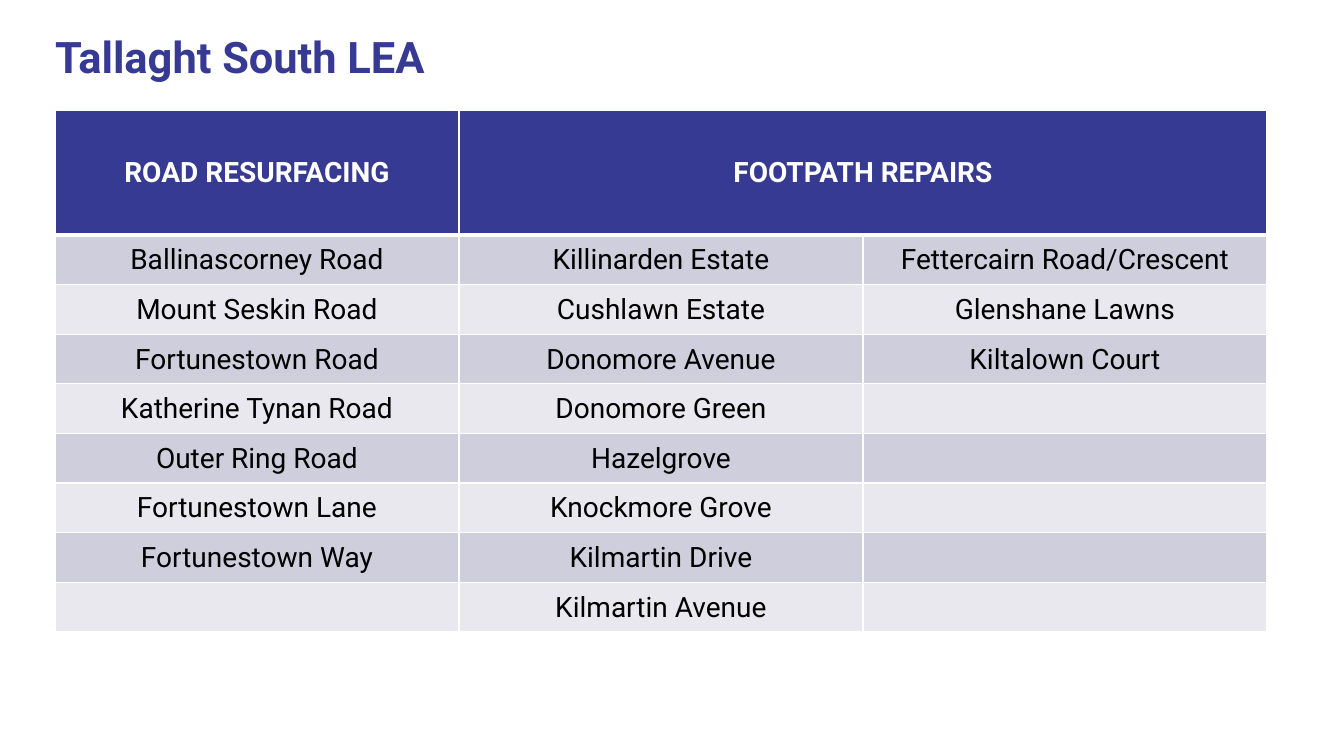
from lxml.etree import SubElement
from pptx import Presentation
from pptx.dml.color import RGBColor
from pptx.enum.text import MSO_ANCHOR, PP_ALIGN
from pptx.oxml.ns import qn
from pptx.util import Emu, Pt

PX_PER_INCH = 100.8
FONT = "Roboto"
INDIGO = RGBColor(0x36, 0x3A, 0x92)
WHITE = RGBColor(0xFF, 0xFF, 0xFF)
BLACK = RGBColor(0x00, 0x00, 0x00)
BANDS = (RGBColor(0xCE, 0xCE, 0xDC), RGBColor(0xE8, 0xE8, 0xEE))
HEADER_HEIGHT = 125
WORKS = [
    ("ROAD RESURFACING", "FOOTPATH REPAIRS", ""),
    ("Ballinascorney Road", "Killinarden Estate", "Fettercairn Road/Crescent"),
    ("Mount Seskin Road", "Cushlawn Estate", "Glenshane Lawns"),
    ("Fortunestown Road", "Donomore Avenue", "Kiltalown Court"),
    ("Katherine Tynan Road", "Donomore Green", ""),
    ("Outer Ring Road", "Hazelgrove", ""),
    ("Fortunestown Lane", "Knockmore Grove", ""),
    ("Fortunestown Way", "Kilmartin Drive", ""),
    ("", "Kilmartin Avenue", ""),
]


def px(length):
    """Turn pixels into EMU."""
    return Emu(round(length * 914400 / PX_PER_INCH))


def style_font(font, size, color, bold):
    """Set the typeface, size, colour and weight of a font."""
    font.name = FONT
    font.size = Pt(size)
    font.color.rgb = color
    font.bold = bold


def add_title(page, text, left, top, width, height):
    """Place and format the title placeholder."""
    title = page.shapes.title
    title.left, title.top, title.width, title.height = map(px, (left, top, width, height))
    frame = title.text_frame
    frame.margin_left = frame.margin_right = frame.margin_top = frame.margin_bottom = 0
    frame.vertical_anchor = MSO_ANCHOR.TOP
    frame.word_wrap = True
    frame.text = text
    para = frame.paragraphs[0]
    para.alignment = PP_ALIGN.LEFT
    para.line_spacing = 0.9
    style_font(para.font, 31, INDIGO, True)


def add_borders(cell, bottom, top):
    """Draw white borders around a cell, with the given bottom and top widths."""
    properties = cell._tc.get_or_add_tcPr()
    for side, width in (("L", 1), ("R", 1), ("T", top), ("B", bottom)):
        line = SubElement(properties, qn(f"a:ln{side}"), w=str(Pt(width)))
        fill = SubElement(line, qn("a:solidFill"))
        SubElement(fill, qn("a:srgbClr"), val=str(WHITE))


def fill_cell(cell, text, row):
    """Format one cell by its row and write its text."""
    header = row == 0
    add_borders(cell, bottom=3 if header else 1, top=3 if row == 1 else 1)
    cell.fill.solid()
    cell.fill.fore_color.rgb = INDIGO if header else BANDS[(row - 1) % 2]
    cell.vertical_anchor = MSO_ANCHOR.MIDDLE
    cell.margin_left = cell.margin_right = cell.margin_top = px(1)
    cell.margin_bottom = 0
    cell.text = text
    para = cell.text_frame.paragraphs[0]
    para.alignment = PP_ALIGN.CENTER
    style_font(para.font, 20, WHITE if header else BLACK, header)


def add_works_table(page, left, top, width, height):
    """Add the table of works with a merged header over the last two columns."""
    frame = page.shapes.add_table(len(WORKS), len(WORKS[0]), *map(px, (left, top, width, height)))
    table = frame.table
    for column in table.columns:
        column.width = px(width / len(WORKS[0]))
    for row, texts in enumerate(WORKS):
        body_height = (height - HEADER_HEIGHT) / (len(WORKS) - 1)
        table.rows[row].height = px(body_height if row else HEADER_HEIGHT)
        for column, text in enumerate(texts):
            fill_cell(table.cell(row, column), text, row)
    table.cell(0, 1).merge(table.cell(0, 2))


def main():
    """Build the slide and save the deck."""
    deck = Presentation()
    deck.slide_width, deck.slide_height = px(1344), px(756)
    page = deck.slides.add_slide(deck.slide_layouts[5])
    add_title(page, "Tallaght South LEA", 55, 36, 616, 95)
    add_works_table(page, 55, 110, 1212, 522)
    deck.save("out.pptx")


if __name__ == "__main__":
    main()
